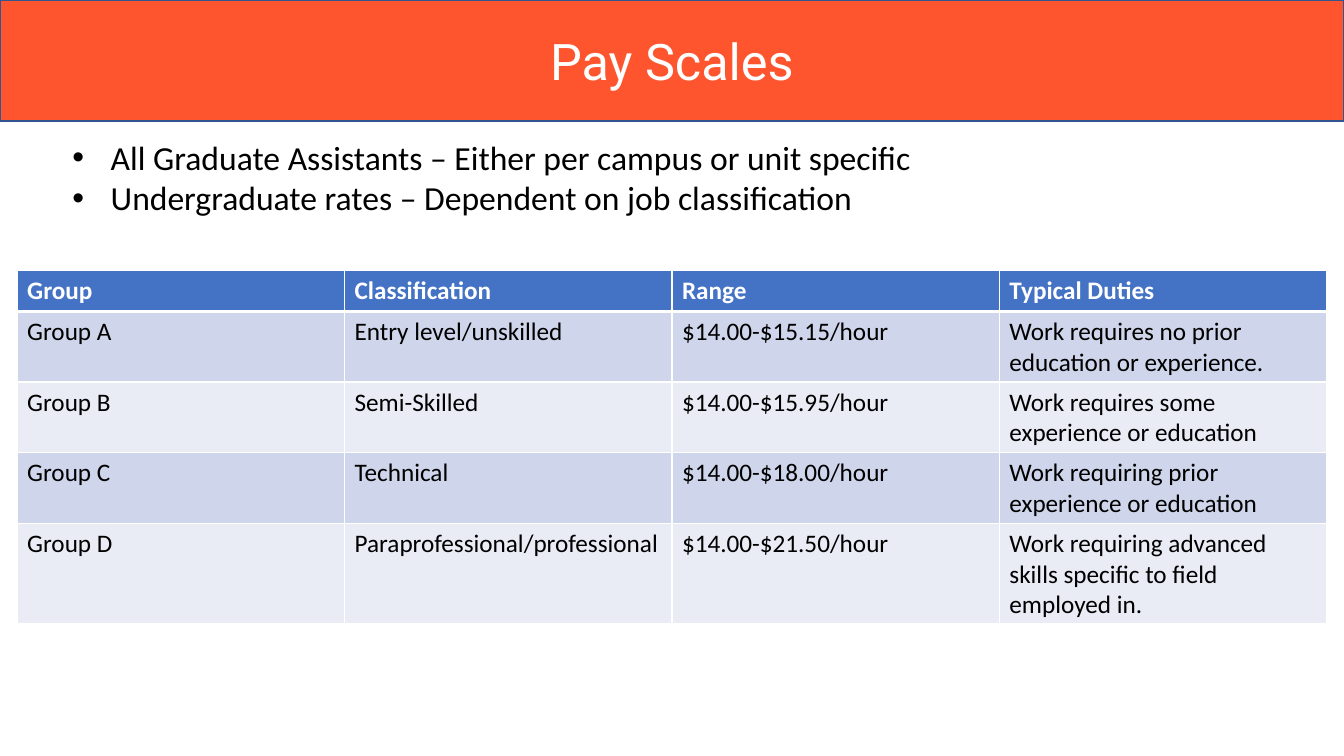
from dataclasses import dataclass

from lxml.etree import SubElement
from pptx import Presentation
from pptx.dml.color import RGBColor
from pptx.enum.shapes import MSO_SHAPE as SHAPE
from pptx.enum.text import MSO_AUTO_SIZE as AUTO_SIZE, PP_ALIGN as ALIGN
from pptx.oxml.ns import qn
from pptx.slide import Slide
from pptx.util import Inches, Pt

ORANGE = RGBColor(0xFE, 0x55, 0x2E)
NAVY = RGBColor(0x32, 0x54, 0x91)
BLUE = RGBColor(0x44, 0x72, 0xC4)
BAND_DARK = RGBColor(0xCF, 0xD5, 0xEA)
BAND_LIGHT = RGBColor(0xE9, 0xEB, 0xF5)
WHITE = RGBColor(0xFF, 0xFF, 0xFF)
BLACK = RGBColor(0, 0, 0)

TITLE = {"name": "Roboto", "size": Pt(36), "color": WHITE}
BULLET = {"name": "Calibri", "size": Pt(24), "color": BLACK}
HEADER = {"name": "Calibri", "size": Pt(18), "color": WHITE, "bold": True}
BODY = HEADER | {"color": BLACK, "bold": False}

COLUMN_WIDTH = 3.2475
HEADINGS = ("Group", "Classification", "Range", "Typical Duties")
HEADING_HEIGHT = 0.41
BULLETS = (
    "All Graduate Assistants – Either per campus or unit specific",
    "Undergraduate rates – Dependent on job classification",
)


@dataclass
class PayGroup:
    name: str
    classification: str
    pay_range: str
    duties: str
    height: float = 0.7


PAY_GROUPS = (
    PayGroup("Group A", "Entry level/unskilled", "$14.00-$15.15/hour",
             "Work requires no prior education or experience."),
    PayGroup("Group B", "Semi-Skilled", "$14.00-$15.95/hour",
             "Work requires some experience or education"),
    PayGroup("Group C", "Technical", "$14.00-$18.00/hour",
             "Work requiring prior experience or education"),
    PayGroup("Group D", "Paraprofessional/professional", "$14.00-$21.50/hour",
             "Work requiring advanced skills specific to field employed in.", 1.0),
)


def add_run(p, text: str, style: dict) -> None:
    r = p.add_run()
    r.text = text
    for key, value in style.items():
        if key == "color":
            r.font.color.rgb = value
        else:
            setattr(r.font, key, value)


def add_text_box(s: Slide, left: float, top: float, width: float, height: float):
    tf = s.shapes.add_textbox(
        Inches(left), Inches(top), Inches(width), Inches(height)).text_frame
    tf.word_wrap = True
    tf.auto_size = AUTO_SIZE.SHAPE_TO_FIT_TEXT
    return tf


def add_banner(s: Slide, width: int) -> None:
    sp = s.shapes.add_shape(SHAPE.RECTANGLE, 0, 0, width, Inches(1.2))
    sp.shadow.inherit = False
    sp.fill.solid()
    sp.fill.fore_color.rgb = ORANGE
    sp.line.color.rgb = NAVY
    sp.line.width = Pt(1)
    p = add_text_box(s, 0.81, 0.25, 11.71, 0.71).paragraphs[0]
    p.alignment = ALIGN.CENTER
    add_run(p, "Pay Scales", TITLE)


def add_bullets(s: Slide) -> None:
    tf = add_text_box(s, 0.12, 1.31, 13.1, 1.72)
    for i, text in enumerate(BULLETS):
        p = tf.add_paragraph() if i else tf.paragraphs[0]
        p.level = 1
        pPr = p._p.get_or_add_pPr()
        pPr.set("marL", str(Inches(0.88)))
        pPr.set("indent", str(Inches(-0.38)))
        SubElement(pPr, qn("a:buFont"), typeface="Arial")
        SubElement(pPr, qn("a:buChar"), char="•")
        add_run(p, text, BULLET)


def fill_cell(cell, text: str, style: dict, color: RGBColor,
              top: float, bottom: float) -> None:
    tcPr = cell._tc.get_or_add_tcPr()
    for side, width in {"L": 1, "R": 1, "T": top, "B": bottom}.items():
        ln = SubElement(tcPr, qn(f"a:ln{side}"), w=str(Pt(width)))
        fill = SubElement(ln, qn("a:solidFill"))
        SubElement(fill, qn("a:srgbClr"), val=str(WHITE))
    cell.fill.solid()
    cell.fill.fore_color.rgb = color
    add_run(cell.text_frame.paragraphs[0], text, style)


def add_pay_table(s: Slide) -> None:
    rows = [HEADINGS] + [
        (g.name, g.classification, g.pay_range, g.duties) for g in PAY_GROUPS]
    heights = [HEADING_HEIGHT] + [g.height for g in PAY_GROUPS]
    table = s.shapes.add_table(
        len(rows), len(HEADINGS), Inches(0.17), Inches(2.68),
        Inches(COLUMN_WIDTH * len(HEADINGS)), Inches(sum(heights))).table
    for column in table.columns:
        column.width = Inches(COLUMN_WIDTH)
    for i, (texts, height) in enumerate(zip(rows, heights)):
        table.rows[i].height = Inches(height)
        style = BODY if i else HEADER
        band = BAND_DARK if i % 2 else BAND_LIGHT
        for j, text in enumerate(texts):
            fill_cell(table.cell(i, j), text, style, band if i else BLUE,
                      top=3 if i == 1 else 1, bottom=1 if i else 3)


def main() -> None:
    prs = Presentation()
    prs.slide_width = Inches(13.33)
    prs.slide_height = Inches(7.5)
    s = prs.slides.add_slide(prs.slide_layouts[6])
    add_banner(s, prs.slide_width)
    add_bullets(s)
    add_pay_table(s)
    prs.save("out.pptx")


if __name__ == "__main__":
    main()
